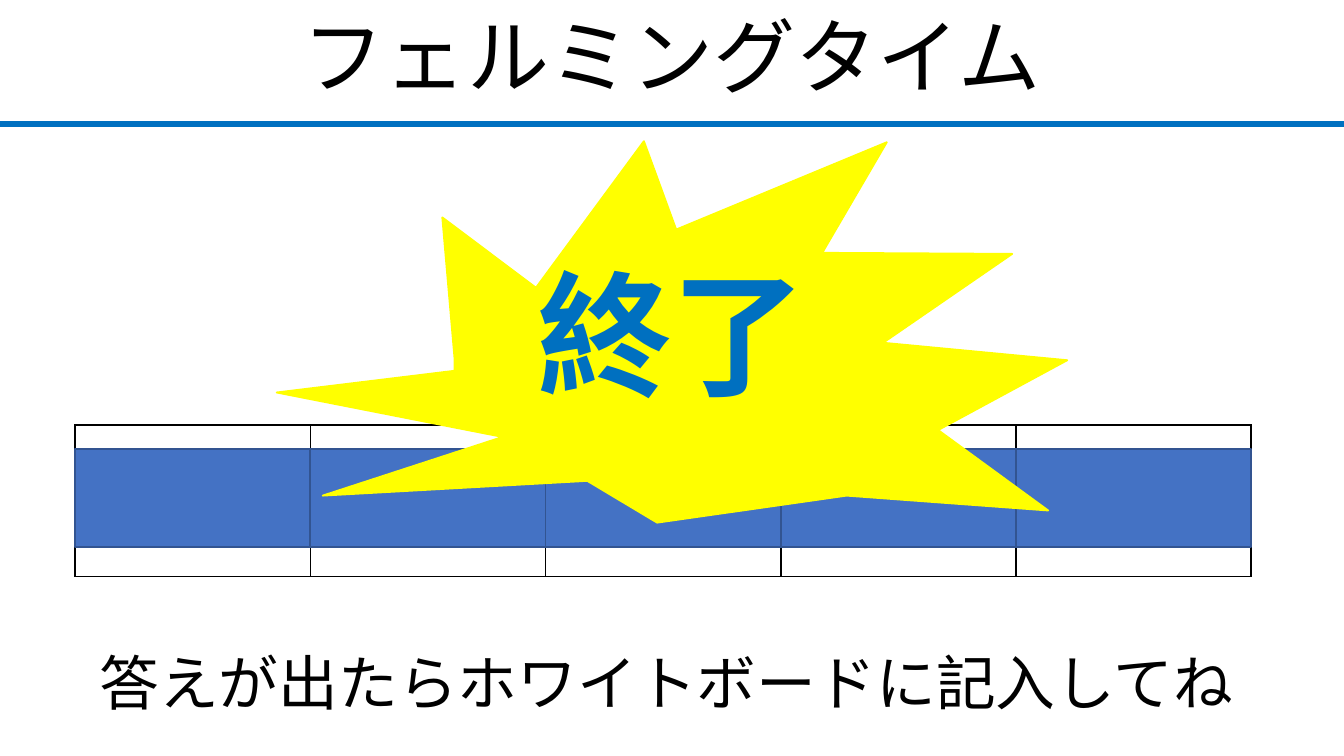
from lxml import etree
from pptx import Presentation
from pptx.dml.color import RGBColor
from pptx.enum.shapes import MSO_CONNECTOR, MSO_SHAPE
from pptx.enum.text import MSO_ANCHOR, MSO_AUTO_SIZE, PP_ALIGN
from pptx.oxml import parse_xml
from pptx.oxml.ns import nsdecls, qn
from pptx.util import Cm, Pt

STRAIGHT = MSO_CONNECTOR.STRAIGHT
RECTANGLE = MSO_SHAPE.RECTANGLE
MIDDLE = MSO_ANCHOR.MIDDLE
CENTER, LEFT = PP_ALIGN.CENTER, PP_ALIGN.LEFT
NO_FIT, GROW = MSO_AUTO_SIZE.NONE, MSO_AUTO_SIZE.SHAPE_TO_FIT_TEXT

# Content
TITLE = "フェルミングタイム"
HINT = "答えが出たらホワイトボードに記入してね"
FINISH = "終了"
STEPS = 5

# Corners of the burst, in centimetres
BURST = [
    (9.5, 8.26), (5.23, 7.42), (8.59, 7.01), (8.59, 6.76), (8.36, 4.11),
    (10.13, 5.44), (12.17, 2.67), (12.78, 4.34), (16.76, 2.69), (15.54, 4.78),
    (19.13, 4.8), (16.69, 6.48), (20.17, 6.81), (17.73, 8.13), (19.81, 9.65),
    (16, 9.37), (12.42, 9.88), (11.1, 9.09), (6.1, 9.37),
]

THEME = {
    "font": "Calibri",
    "title": 44, "hint": 32, "finish": 72,
    "black": "000000", "accent": "0070C0", "burst": "FFFF00",
    "bar": "4472C4", "bar_edge": "325491",
}

# Layout, in centimetres
PAGE_WIDTH, PAGE_HEIGHT = 25.4, 14.29
RULE_Y = 2.34
GRID_LEFT, GRID_TOP, GRID_HEIGHT = 1.42, 8.03, 2.87
STEP_WIDTH = 4.445
BAR_TOP, BAR_HEIGHT = 8.48, 1.86


def color(name):
    return RGBColor.from_string(THEME[name])


def write(frame, text, role, color_name, align, bold=False):
    frame.text = text
    para = frame.paragraphs[0]
    para.alignment = align
    font = para.runs[0].font
    font.name, font.size, font.bold = THEME["font"], Pt(THEME[role]), bold
    font.color.rgb = color(color_name)
    return para


def paint(shape, fill, edge):
    shape.shadow.inherit = False
    shape.fill.solid()
    shape.fill.fore_color.rgb = color(fill)
    shape.line.color.rgb = color(edge)
    shape.line.width = Pt(1)


def outline(cell):
    cell.fill.background()
    properties = cell._tc.get_or_add_tcPr()
    for index, side in enumerate(("lnL", "lnR", "lnT", "lnB")):
        properties.insert(index, parse_xml(
            f'<a:{side} {nsdecls("a")} w="{Pt(1)}"><a:solidFill>'
            f'<a:srgbClr val="{THEME["black"]}"/></a:solidFill></a:{side}>'))


deck = Presentation()
deck.slide_width, deck.slide_height = Cm(PAGE_WIDTH), Cm(PAGE_HEIGHT)
page = deck.slides.add_slide(deck.slide_layouts[5])
shapes = page.shapes

# Title and the rule below it
title = shapes.title
title.left, title.top, title.width, title.height = Cm(1.75), Cm(0), Cm(21.9), Cm(2.29)
title.text_frame.auto_size = NO_FIT
title.text_frame.vertical_anchor = MIDDLE
write(title.text_frame, TITLE, "title", "black", CENTER).line_spacing = 0.9

rule = shapes.add_connector(STRAIGHT, Cm(0), Cm(RULE_Y), Cm(PAGE_WIDTH), Cm(RULE_Y))
rule.line.color.rgb = color("accent")
rule.line.width = Pt(3)
etree.SubElement(rule._element.spPr, qn("a:effectLst"))

# Hint at the bottom
hint = shapes.add_textbox(Cm(1.63), Cm(12.09), Cm(22.17), Cm(1.63))
hint.text_frame.word_wrap = False
hint.text_frame.auto_size = GROW
write(hint.text_frame, HINT, "hint", "black", LEFT)

# Time grid
grid = shapes.add_table(1, STEPS, Cm(GRID_LEFT), Cm(GRID_TOP),
                        Cm(STEPS * STEP_WIDTH), Cm(GRID_HEIGHT)).table
grid.first_row = grid.horz_banding = False
for cell in grid.iter_cells():
    outline(cell)

# Bars that fill the grid, last one at the back
for step in reversed(range(STEPS)):
    bar = shapes.add_shape(RECTANGLE, Cm(GRID_LEFT + step * STEP_WIDTH), Cm(BAR_TOP),
                           Cm(STEP_WIDTH), Cm(BAR_HEIGHT))
    paint(bar, "bar", "bar_edge")

# Burst announcing the end
corners = [(Cm(x), Cm(y)) for x, y in BURST]
builder = shapes.build_freeform(*corners[0])
builder.add_line_segments(corners[1:], close=True)
burst = builder.convert_to_shape()
paint(burst, "burst", "burst")
burst.text_frame.vertical_anchor = MIDDLE
write(burst.text_frame, FINISH, "finish", "accent", CENTER, bold=True)

deck.save("out.pptx")
